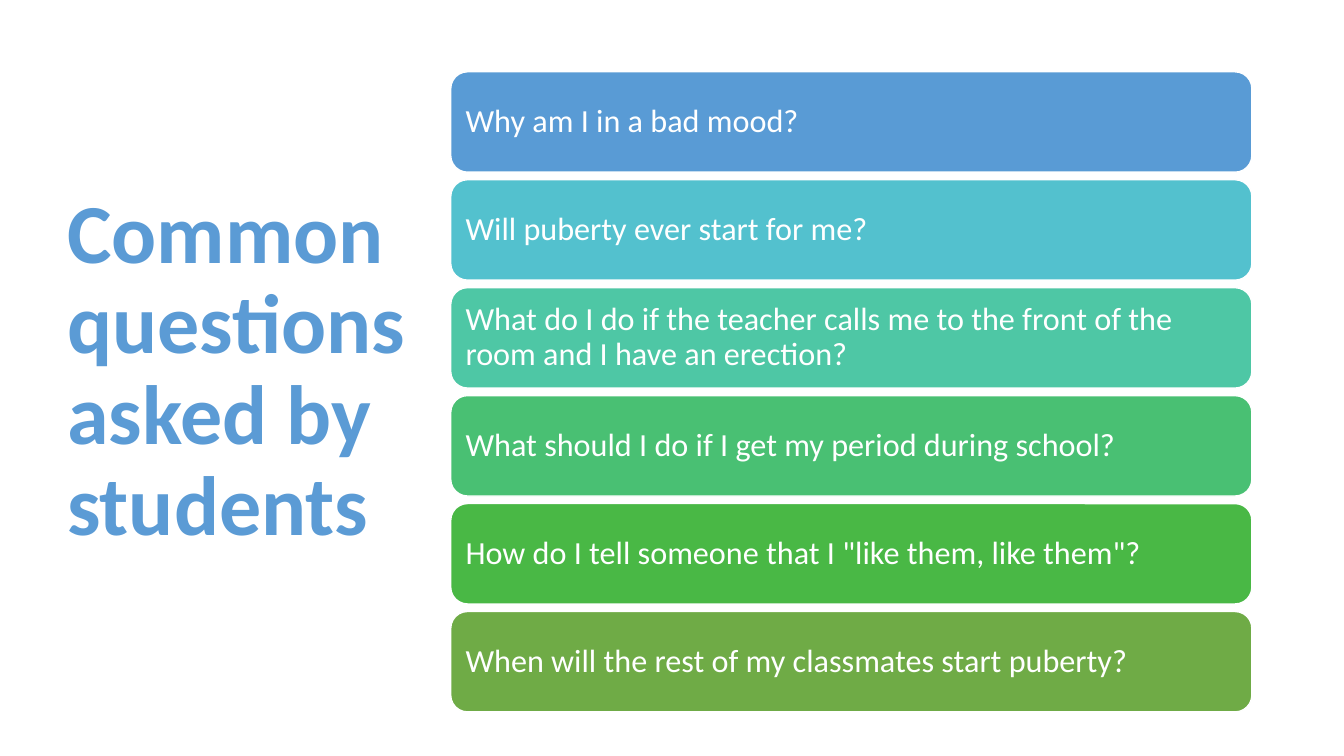
from pptx import Presentation
from pptx.dml.color import RGBColor
from pptx.enum.shapes import MSO_SHAPE
from pptx.enum.text import MSO_ANCHOR, PP_ALIGN
from pptx.util import Cm, Pt

ROUNDED = MSO_SHAPE.ROUNDED_RECTANGLE
MIDDLE = MSO_ANCHOR.MIDDLE
LEFT = PP_ALIGN.LEFT

QUESTIONS = [
    ("Why am I in a bad mood?", "599BD5"),
    ("Will puberty ever start for me?", "53C1CE"),
    ("What do I do if the teacher calls me to the front of the room "
     "and I have an erection?", "4EC7A5"),
    ("What should I do if I get my period during school?", "49C073"),
    ('How do I tell someone that I "like them, like them"?', "49B845"),
    ("When will the rest of my classmates start puberty?", "6FAB46"),
]
FIRST_TOP = 1.81
PITCH = 2.72


def color(hex_code):
    return RGBColor.from_string(hex_code)


class QuestionSlide:
    FONT = "Calibri"
    ACCENT = "5B9BD5"
    WHITE = "FFFFFF"
    LINE_SPACING = 0.9

    def __init__(self, deck):
        self.slide = deck.slides.add_slide(deck.slide_layouts[6])

    def set_text(self, holder, text, size, hex_code, inset, bold=False):
        """Fill a shape with one left-aligned, vertically centred paragraph."""
        frame = holder.text_frame
        frame.text = text
        frame.word_wrap = True
        frame.vertical_anchor = MIDDLE
        frame.margin_left = frame.margin_right = Cm(0.25)
        frame.margin_top = frame.margin_bottom = Cm(inset)
        paragraph = frame.paragraphs[0]
        paragraph.alignment = LEFT
        paragraph.line_spacing = self.LINE_SPACING
        font = paragraph.runs[0].font
        font.name = self.FONT
        font.size = Pt(size)
        font.bold = bold
        font.color.rgb = color(hex_code)

    def title(self, text):
        heading = self.slide.shapes.add_textbox(
            Cm(1.45), Cm(1.73), Cm(10.57), Cm(15.29))
        self.set_text(heading, text, 60, self.ACCENT, inset=0.13, bold=True)

    def question(self, top, text, fill):
        bar = self.slide.shapes.add_shape(
            ROUNDED, Cm(11.36), Cm(top), Cm(20.19), Cm(2.53))
        bar.shadow.inherit = False
        bar.adjustments[0] = 0.167
        bar.fill.solid()
        bar.fill.fore_color.rgb = color(fill)
        bar.line.color.rgb = color(self.WHITE)
        bar.line.width = Pt(1)
        self.set_text(bar, text, 23, self.WHITE, inset=0.25)


def main():
    deck = Presentation()
    deck.slide_width = Cm(33.87)
    deck.slide_height = Cm(19.05)
    page = QuestionSlide(deck)
    page.title("Common questions asked by students")
    for row, (text, fill) in enumerate(QUESTIONS):
        page.question(FIRST_TOP + row * PITCH, text, fill)
    deck.save("out.pptx")


if __name__ == "__main__":
    main()
